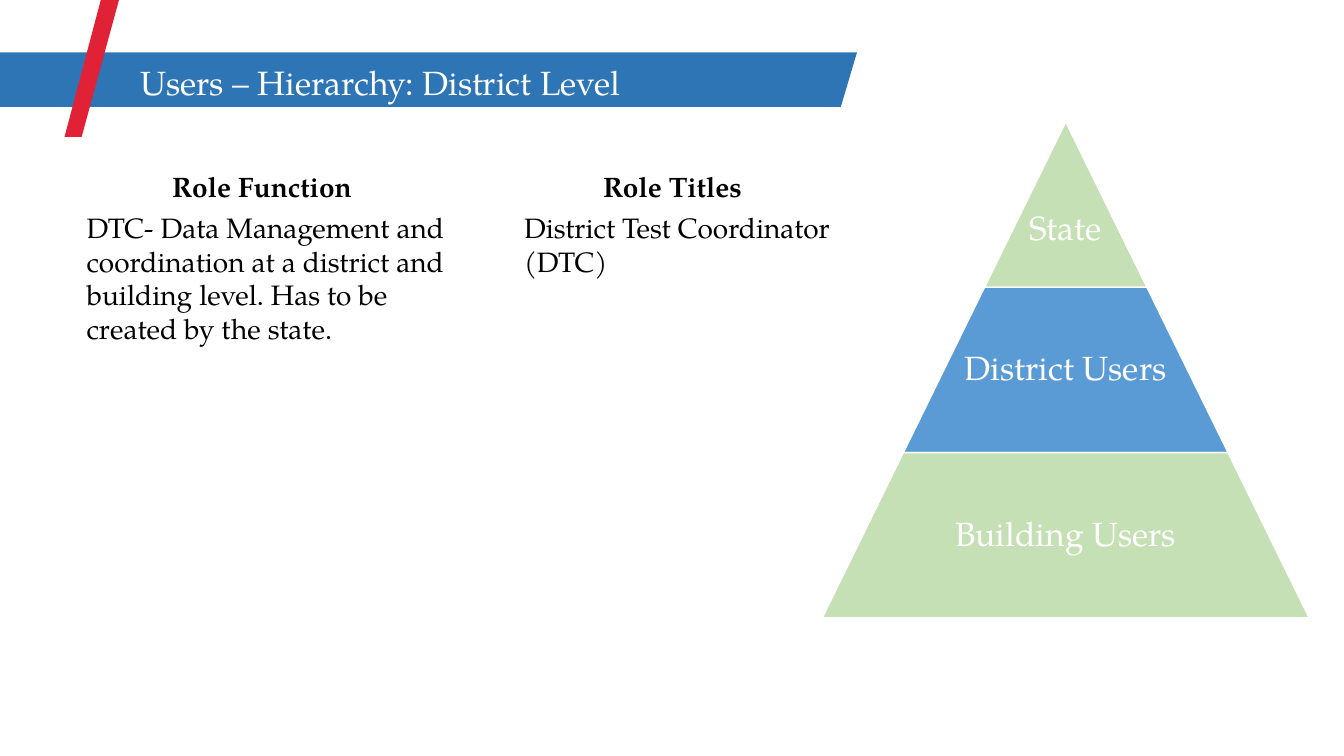
from pptx import Presentation
from pptx.dml.color import RGBColor
from pptx.enum.shapes import MSO_SHAPE
from pptx.enum.text import MSO_ANCHOR, PP_ALIGN
from pptx.util import Inches, Pt

TRAPEZOID = MSO_SHAPE.TRAPEZOID
TOP, MIDDLE = MSO_ANCHOR.TOP, MSO_ANCHOR.MIDDLE
LEFT, CENTER = PP_ALIGN.LEFT, PP_ALIGN.CENTER

FONT = "TeX Gyre Pagella"
COLORS = {
    "banner": "2E75B6",
    "slash": "E02136",
    "muted": "C5E0B4",
    "active": "5B9BD5",
    "white": "FFFFFF",
    "black": "000000",
}

# Pyramid geometry in inches; each tier is one step wider than the one above
PYRAMID_CENTER, PYRAMID_TOP = 10.57, 1.21
TIER_STEP, TIER_HEIGHT = 1.61, 1.64
TIERS = [  # label, fill, drop of the label area below the tier top
    ("State", "muted", 0.5),
    ("District Users", "active", 0),
    ("Building Users", "muted", 0),
]


def rgb(name):
    return RGBColor.from_string(COLORS[name])


def write_text(box, text, size, color, align=LEFT, bold=False):
    frame = box.text_frame
    frame.word_wrap = True
    frame.text = text
    para = frame.paragraphs[0]
    para.alignment = align
    font = para.runs[0].font
    font.name, font.size, font.bold = FONT, Pt(size), bold
    font.color.rgb = rgb(color)
    return frame


def add_text(page, place, text, size=20, color="black", align=LEFT, bold=False):
    box = page.shapes.add_textbox(*map(Inches, place))
    return write_text(box, text, size, color, align, bold)


def add_polygon(page, points, color):
    corners = [(Inches(x), Inches(y)) for x, y in points]
    builder = page.shapes.build_freeform(*corners[0], scale=1.0)
    builder.add_line_segments(corners[1:], close=True)
    shape = builder.convert_to_shape()
    shape.shadow.inherit = False
    shape.fill.solid()
    shape.fill.fore_color.rgb = rgb(color)
    shape.line.fill.background()


def add_title(page, text):
    title = page.shapes.title
    title.left, title.top = Inches(1.29), Inches(0.56)
    title.width, title.height = Inches(5.47), Inches(0.5)
    frame = write_text(title, text, 24, "white")
    frame.vertical_anchor = TOP
    frame.paragraphs[0].line_spacing = 1.0


def add_tier(page, index, label, color, drop):
    width = TIER_STEP * (index + 1)
    left = PYRAMID_CENTER - width / 2
    top = PYRAMID_TOP + TIER_HEIGHT * index
    place = (left, top, width, TIER_HEIGHT)
    tier = page.shapes.add_shape(TRAPEZOID, *map(Inches, place))
    tier.adjustments[0] = TIER_STEP / 2 / min(width, TIER_HEIGHT)
    tier.shadow.inherit = False
    tier.fill.solid()
    tier.fill.fore_color.rgb = rgb(color)
    tier.line.color.rgb = rgb("white")
    tier.line.width = Pt(1)

    label_place = (left, top + drop, width, TIER_HEIGHT - drop)
    frame = add_text(page, label_place, label, 24, "white", CENTER)
    frame.vertical_anchor = MIDDLE
    frame.margin_left = frame.margin_right = Inches(0.03)
    frame.margin_top = frame.margin_bottom = Inches(0.03)
    frame.paragraphs[0].line_spacing = 0.9


def main():
    deck = Presentation()
    deck.slide_width, deck.slide_height = Inches(13.33), Inches(7.5)
    page = deck.slides.add_slide(deck.slide_layouts[5])

    # Banner, slash and title
    add_polygon(page, [(0, 0.52), (8.5, 0.52), (8.34, 1.06), (0, 1.06)], "banner")
    add_polygon(page, [(0.64, 1.36), (1, 0), (1.18, 0), (0.81, 1.36)], "slash")
    add_title(page, "Users – Hierarchy: District Level")
    # Bring the title in front of the banner
    page.shapes._spTree.append(page.shapes.title._element)

    # Pyramid
    for index, (label, color, drop) in enumerate(TIERS):
        add_tier(page, index, label, color, drop)

    # Role columns
    add_text(page, (1.61, 1.63, 3, 0.44), "Role Function", bold=True)
    add_text(page, (0.76, 2.04, 3.85, 1.5),
             "DTC- Data Management and coordination at a district and "
             "building level. Has to be created by the state.")
    add_text(page, (5.17, 1.63, 3, 0.44), "Role Titles", align=CENTER, bold=True)
    add_text(page, (5.1, 2.04, 3.82, 0.8), "District Test Coordinator (DTC)")

    deck.save("out.pptx")


if __name__ == "__main__":
    main()
